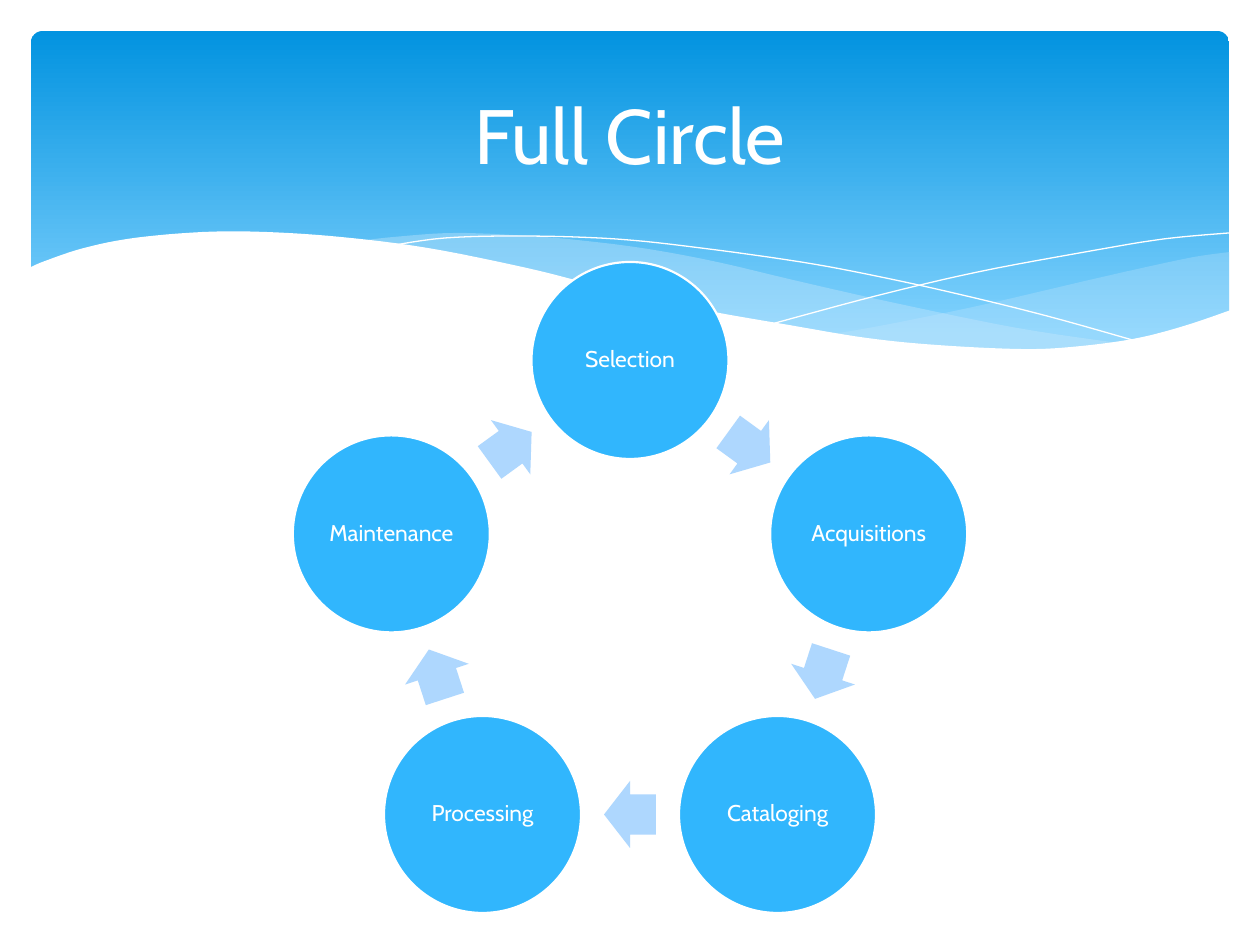
import math
from lxml import etree
from pptx import Presentation
from pptx import util as u
from pptx.dml.color import RGBColor
from pptx.enum import shapes, text
from pptx.oxml.ns import qn

PX = 914400 // 126
FONT = "Cabin"
STAGES = ["Selection", "Acquisitions", "Cataloging", "Processing", "Maintenance"]

RIGHT_TOP = [(1199, 221), (1163, 226), (1111, 237), (1054, 250), (951, 274),
             (859, 293), (802, 303)]
RIGHT_BOTTOM = [(802, 303), (875, 312), (938, 318), (995, 319), (1045, 317),
                (1099, 309), (1147, 299), (1199, 280)]
MIDDLE_TOP = [(1094, 313), (986, 297), (859, 271), (762, 249), (686, 231),
              (617, 218), (555, 210), (498, 205), (424, 202), (363, 206), (329, 210)]
MIDDLE_BOTTOM = [(329, 210), (400, 220), (478, 235), (535, 249), (637, 271),
                 (726, 290), (807, 304), (879, 314), (958, 319), (1025, 319), (1094, 313)]
FALLING_LINE = [(358, 215), (414, 207), (493, 205), (585, 208), (670, 217),
                (770, 231), (845, 245), (927, 263), (1016, 285), (1112, 312)]
RISING_LINE = [(741, 293), (845, 265), (947, 241), (1060, 220), (1133, 208), (1198, 202)]
FRONT_TOP = [(1200, 279), (1153, 295), (1102, 308), (1040, 316), (988, 318),
             (906, 314), (836, 307), (758, 294), (668, 278), (568, 255), (496, 237),
             (397, 217), (310, 206), (235, 201), (172, 201), (103, 207), (53, 217),
             (14, 230), (-2, 237)]
FRONT_BASE = [(-2, 384), (1200, 384)]


def px(n):
    return round(n * PX)


def rgb(value):
    return RGBColor.from_string(value)


def paint(sp, fill=None, line=None, width=0, alpha=None):
    sp.shadow.inherit = False
    if fill:
        sp.fill.solid()
        sp.fill.fore_color.rgb = rgb(fill)
    else:
        sp.fill.background()
    if alpha:
        clr = sp.fill._xPr.find(qn("a:solidFill"))[0]
        etree.SubElement(clr, qn("a:alpha"), val=str(alpha * 1000))
    if line:
        sp.line.color.rgb = rgb(line)
        sp.line.width = u.Pt(width)
    else:
        sp.line.fill.background()


def write(sp, words, size, inset):
    tf = sp.text_frame
    frame = {"word_wrap": True, "vertical_anchor": text.MSO_ANCHOR.MIDDLE}
    frame.update({f"margin_{side}": px(inset) for side in ("left", "top", "right", "bottom")})
    p = tf.paragraphs[0]
    r = p.add_run()
    r.text = words
    formats = [(tf, frame), (p, {"alignment": text.PP_ALIGN.CENTER}),
               (r.font, {"name": FONT, "size": u.Pt(size)})]
    for target, values in formats:
        for name, value in values.items():
            setattr(target, name, value)
    r.font.color.rgb = rgb("FFFFFF")
    return p


def smooth(knots, steps=6):
    ends = [knots[0], *knots, knots[-1]]
    points = [knots[0]]
    for a, b, c, d in zip(ends, ends[1:], ends[2:], ends[3:]):
        for i in range(1, steps + 1):
            t = i / steps
            points.append(tuple(
                (2 * q + (r - p) * t + (2 * p - 5 * q + 4 * r - s) * t ** 2
                 + (3 * q - p - 3 * r + s) * t ** 3) / 2
                for p, q, r, s in zip(a, b, c, d)))
    return points


def add_outline(s, x, y, points, close, **look):
    spots = [(px(x + a), px(y + b)) for a, b in points]
    fb = s.shapes.build_freeform(*spots[0])
    fb.add_line_segments(spots[1:], close=close)
    paint(fb.convert_to_shape(), **look)


def add_banner(s, x, y, w, h):
    sp = s.shapes.add_shape(shapes.MSO_SHAPE.ROUNDED_RECTANGLE, px(x), px(y), px(w), px(h))
    sp.adjustments[0] = 0.034
    paint(sp)
    sp.fill.gradient()
    sp.fill.gradient_angle = 270
    for stop, (place, color) in zip(sp.fill.gradient_stops, [(0, "0293E0"), (0.9, "83D3FE")]):
        stop.position = place
        stop.color.rgb = rgb(color)
    for top, bottom, alpha in [(RIGHT_TOP, RIGHT_BOTTOM, 29), (MIDDLE_TOP, MIDDLE_BOTTOM, 40)]:
        add_outline(s, x, y, smooth(top) + smooth(bottom), True, fill="C6E7FC", alpha=alpha)
    for knots in (FALLING_LINE, RISING_LINE):
        add_outline(s, x, y, smooth(knots), False, line="FFFFFF")
    add_outline(s, x, y, smooth(FRONT_TOP) + FRONT_BASE, True, fill="FFFFFF")


def add_title(s, x, y, w, h):
    sp = s.shapes.add_textbox(px(x), px(y), px(w), px(h))
    write(sp, "Full Circle", 44, 6)


def add_cycle(s, x, y, w, h, disc=197, arrow_w=52, arrow_h=67):
    step = 2 * math.pi / len(STAGES)
    radius = (h - disc) / (1 + math.cos(step / 2))
    inner = radius * math.cos(step / 2)
    cx, cy = x + w / 2, y + disc / 2 + radius

    def place(kind, angle, reach, pw, ph):
        left = cx + reach * math.sin(angle) - pw / 2
        top = cy - reach * math.cos(angle) - ph / 2
        return s.shapes.add_shape(kind, px(left), px(top), px(pw), px(ph))

    for i, stage in enumerate(STAGES):
        sp = place(shapes.MSO_SHAPE.OVAL, i * step, radius, disc, disc)
        paint(sp, "31B6FD", "FFFFFF", 1.25)
        write(sp, stage, 13, 2).line_spacing = 0.9
        turn = (i + 0.5) * step
        sp = place(shapes.MSO_SHAPE.RIGHT_ARROW, turn, inner, arrow_w, arrow_h)
        sp.rotation = math.degrees(turn)
        sp.adjustments[0] = 0.6
        sp.adjustments[1] = 0.5
        paint(sp, "AED7FE")


def main():
    prs = Presentation()
    prs.slide_width, prs.slide_height = u.Inches(10), u.Inches(7.5)
    s = prs.slides.add_slide(prs.slide_layouts[6])
    add_banner(s, 31, 31, 1198, 340)
    add_title(s, 63, 47, 1134, 173)
    add_cycle(s, 293, 262, 674, 651)
    prs.save("out.pptx")


if __name__ == "__main__":
    main()
